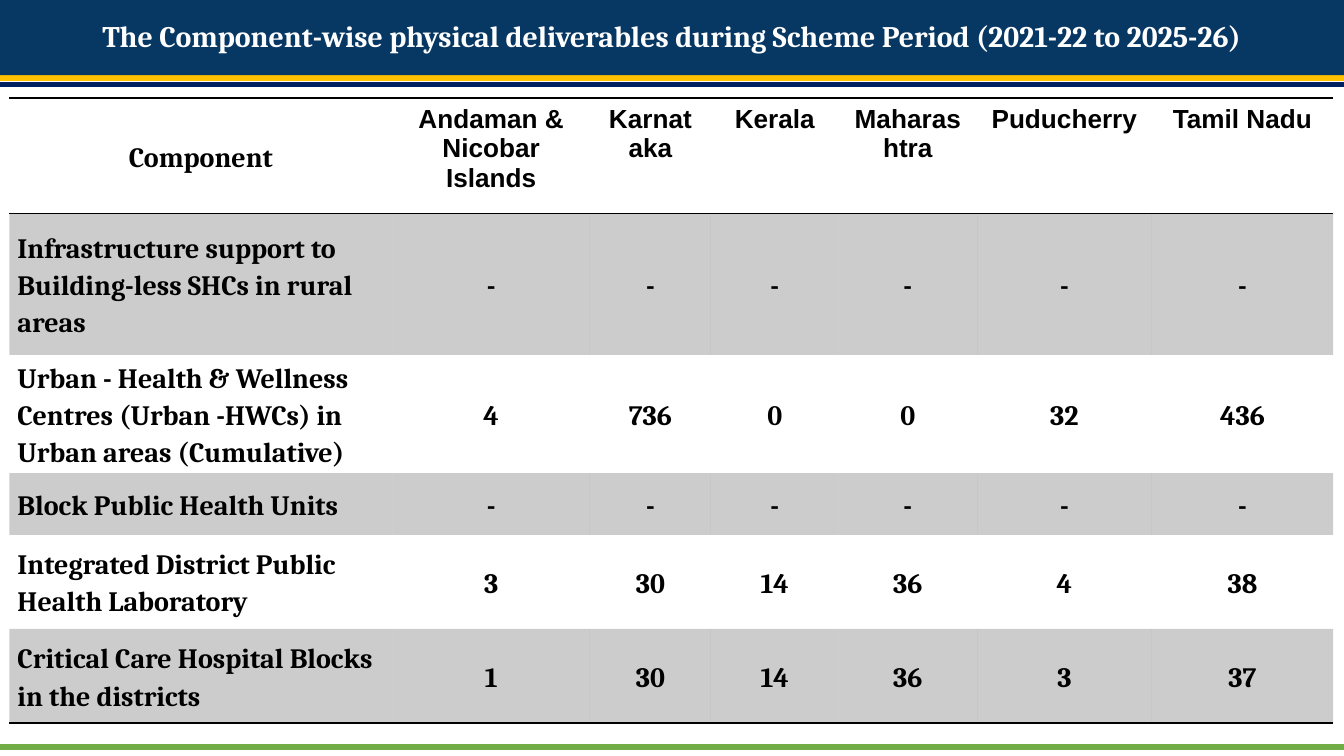
from dataclasses import dataclass

from lxml.etree import SubElement
from pptx import Presentation
from pptx.dml.color import RGBColor
from pptx.enum.shapes import MSO_CONNECTOR
from pptx.enum.text import MSO_ANCHOR, MSO_AUTO_SIZE, PP_ALIGN
from pptx.oxml import parse_xml
from pptx.oxml.ns import nsdecls, qn
from pptx.slide import Slide
from pptx.table import _Cell
from pptx.text.text import _Paragraph
from pptx.util import Inches, Pt


@dataclass(frozen=True)
class Theme:
    navy: str = "073763"
    gold: str = "FFC000"
    indigo: str = "002060"
    green: str = "70AD47"
    black: str = "000000"
    white: str = "FFFFFF"
    band_opacity: int = 20
    serif: str = "Cambria"
    sans: str = "Arial"
    title_size: float = 16
    body_size: float = 15
    state_size: float = 14
    border_width: float = 1
    plain_table_style: str = "{2D5ABB26-0587-4C30-8999-92F81FD0307C}"


@dataclass(frozen=True)
class Rule:
    top: float
    color: str
    width: float


@dataclass(frozen=True)
class Deliverable:
    component: str
    values: tuple[str, ...]
    height: float


THEME = Theme()
SLIDE_WIDTH = 10
SLIDE_HEIGHT = SLIDE_WIDTH * 9 / 16
TITLE = "The Component-wise physical deliverables during Scheme Period (2021-22 to 2025-26)"

# Rules behind the title bar and at the foot, then the one over the bar
BACK_RULES = (
    Rule(0.57, THEME.gold, 3),
    Rule(0.63, THEME.indigo, 3),
    Rule(5.56, THEME.green, 3),
)
FRONT_RULE = Rule(0.59, THEME.gold, 2.25)

STATES = ("Andaman & Nicobar Islands", "Karnataka", "Kerala", "Maharashtra",
          "Puducherry", "Tamil Nadu")
COLUMN_WIDTHS = (2.85, 1.47, 0.9, 0.95, 1.03, 1.3, 1.35)
HEADER_HEIGHT = 0.86
NOT_PLANNED = ("-",) * len(STATES)
DELIVERABLES = (
    Deliverable("Infrastructure support to Building-less SHCs in rural areas",
                NOT_PLANNED, 1.05),
    Deliverable("Urban - Health & Wellness Centres (Urban -HWCs) in Urban areas (Cumulative)",
                ("4", "736", "0", "0", "32", "436"), 0.88),
    Deliverable("Block Public Health Units", NOT_PLANNED, 0.46),
    Deliverable("Integrated District Public Health Laboratory",
                ("3", "30", "14", "36", "4", "38"), 0.7),
    Deliverable("Critical Care Hospital Blocks in the districts",
                ("1", "30", "14", "36", "3", "37"), 0.7),
)


def style_paragraph(para: _Paragraph, font: str, size: float, color: str,
                    align: PP_ALIGN, spacing: float) -> None:
    para.alignment = align
    para.line_spacing = spacing
    para.font.name = font
    para.font.size = Pt(size)
    para.font.bold = True
    para.font.color.rgb = RGBColor.from_string(color)


def draw_rule(page: Slide, rule: Rule) -> None:
    line = page.shapes.add_connector(MSO_CONNECTOR.STRAIGHT, 0, Inches(rule.top),
                                     Inches(SLIDE_WIDTH), Inches(rule.top))
    line.line.color.rgb = RGBColor.from_string(rule.color)
    line.line.width = Pt(rule.width)
    SubElement(line.element.spPr, qn("a:effectLst"))


def draw_title(page: Slide) -> None:
    title = page.shapes.title
    title.left, title.top = Inches(0), Inches(0)
    title.width, title.height = Inches(SLIDE_WIDTH), Inches(0.56)
    title.fill.solid()
    title.fill.fore_color.rgb = RGBColor.from_string(THEME.navy)
    frame = title.text_frame
    frame.text = TITLE
    frame.word_wrap = True
    frame.auto_size = MSO_AUTO_SIZE.NONE
    frame.vertical_anchor = MSO_ANCHOR.MIDDLE
    frame.margin_left = frame.margin_right = Inches(0.07)
    frame.margin_top = frame.margin_bottom = Inches(0.04)
    style_paragraph(frame.paragraphs[0], THEME.serif, THEME.title_size,
                    THEME.white, PP_ALIGN.CENTER, 0.9)
    # Bring the bar in front of the rules drawn so far
    page.shapes.element.append(title.element)


def write_state(cell: _Cell, text: str) -> None:
    cell.text = text
    style_paragraph(cell.text_frame.paragraphs[0], THEME.sans, THEME.state_size,
                    THEME.black, PP_ALIGN.CENTER, 1.0)


def write_body(cell: _Cell, text: str, align: PP_ALIGN) -> None:
    cell.text = text
    cell.vertical_anchor = MSO_ANCHOR.MIDDLE
    cell.margin_left = cell.margin_right = Inches(0.06)
    cell.margin_top = cell.margin_bottom = Inches(0)
    style_paragraph(cell.text_frame.paragraphs[0], THEME.serif, THEME.body_size,
                    THEME.black, align, 1.15)


def fill_cell(cell: _Cell, banded: bool) -> None:
    if not banded:
        cell.fill.background()
        return
    cell.fill.solid()
    cell.fill.fore_color.rgb = RGBColor.from_string(THEME.black)
    color = cell._tc.tcPr.find(f"{qn('a:solidFill')}/{qn('a:srgbClr')}")
    SubElement(color, qn("a:alpha")).set("val", str(THEME.band_opacity * 1000))


def border_cell(cell: _Cell, sides: tuple[str, ...]) -> None:
    # Borders come before the fill in the cell properties
    for position, side in enumerate(sides):
        border = parse_xml(
            f'<a:ln{side} {nsdecls("a")} w="{Pt(THEME.border_width)}">'
            f'<a:solidFill><a:srgbClr val="{THEME.black}"/></a:solidFill></a:ln{side}>')
        cell._tc.tcPr.insert(position, border)


def draw_table(page: Slide) -> None:
    heights = (HEADER_HEIGHT, *(item.height for item in DELIVERABLES))
    frame = page.shapes.add_table(len(heights), len(COLUMN_WIDTHS), Inches(0.07), Inches(0.73),
                                  Inches(sum(COLUMN_WIDTHS)), Inches(sum(heights)))
    table = frame.table
    table.horz_banding = False
    table._tbl.tblPr.find(qn("a:tableStyleId")).text = THEME.plain_table_style
    for column, width in zip(table.columns, COLUMN_WIDTHS):
        column.width = Inches(width)
    for row, height in zip(table.rows, heights):
        row.height = Inches(height)

    # Header row
    write_body(table.cell(0, 0), "Component", PP_ALIGN.CENTER)
    for column, state in enumerate(STATES, start=1):
        write_state(table.cell(0, column), state)

    # One row for each deliverable
    for row, item in enumerate(DELIVERABLES, start=1):
        write_body(table.cell(row, 0), item.component, PP_ALIGN.LEFT)
        for column, value in enumerate(item.values, start=1):
            write_body(table.cell(row, column), value, PP_ALIGN.CENTER)

    # Grey bands on odd rows; lines around the header and under the last row
    borders = {0: ("T", "B"), len(DELIVERABLES): ("B",)}
    for index, row in enumerate(table.rows):
        for cell in row.cells:
            fill_cell(cell, banded=index % 2 == 1)
            border_cell(cell, borders.get(index, ()))


def main() -> None:
    deck = Presentation()
    deck.slide_width, deck.slide_height = Inches(SLIDE_WIDTH), Inches(SLIDE_HEIGHT)
    page = deck.slides.add_slide(deck.slide_layouts.get_by_name("Title Only"))
    for rule in BACK_RULES:
        draw_rule(page, rule)
    draw_title(page)
    draw_rule(page, FRONT_RULE)
    draw_table(page)
    deck.save("out.pptx")


if __name__ == "__main__":
    main()
